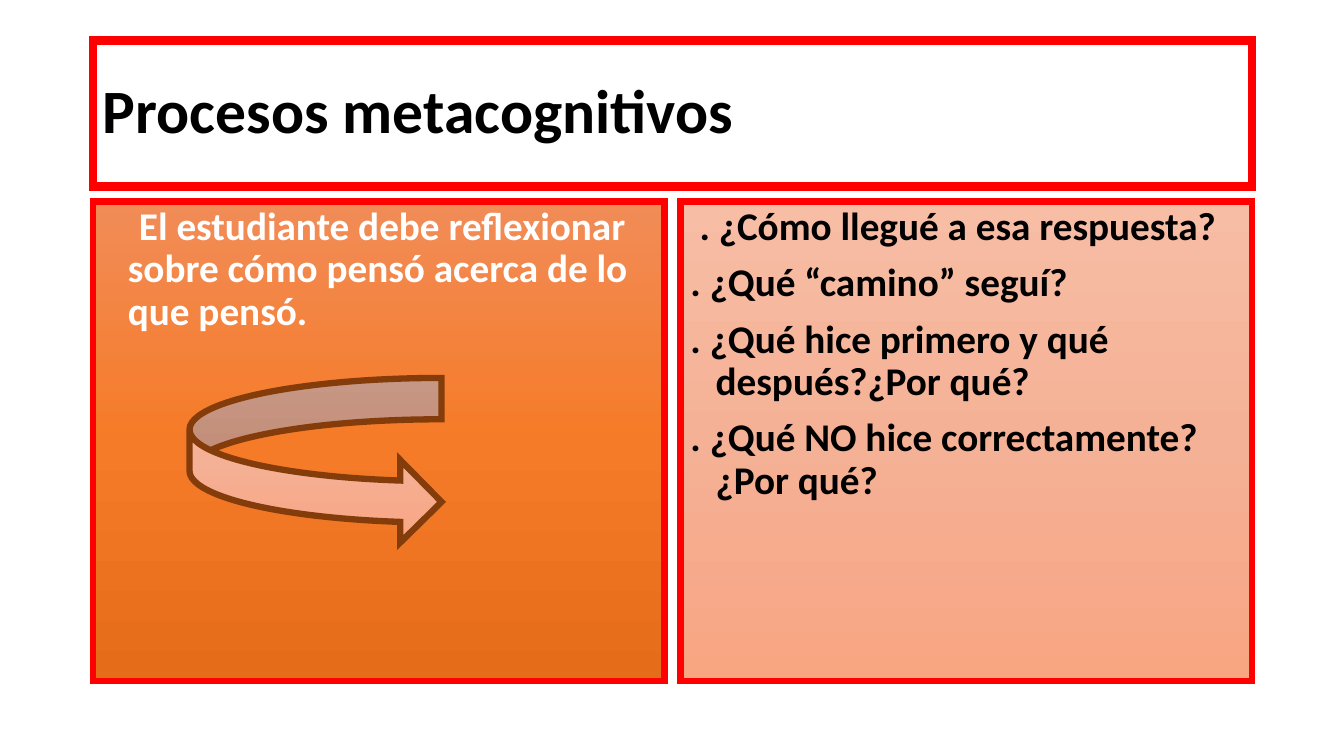
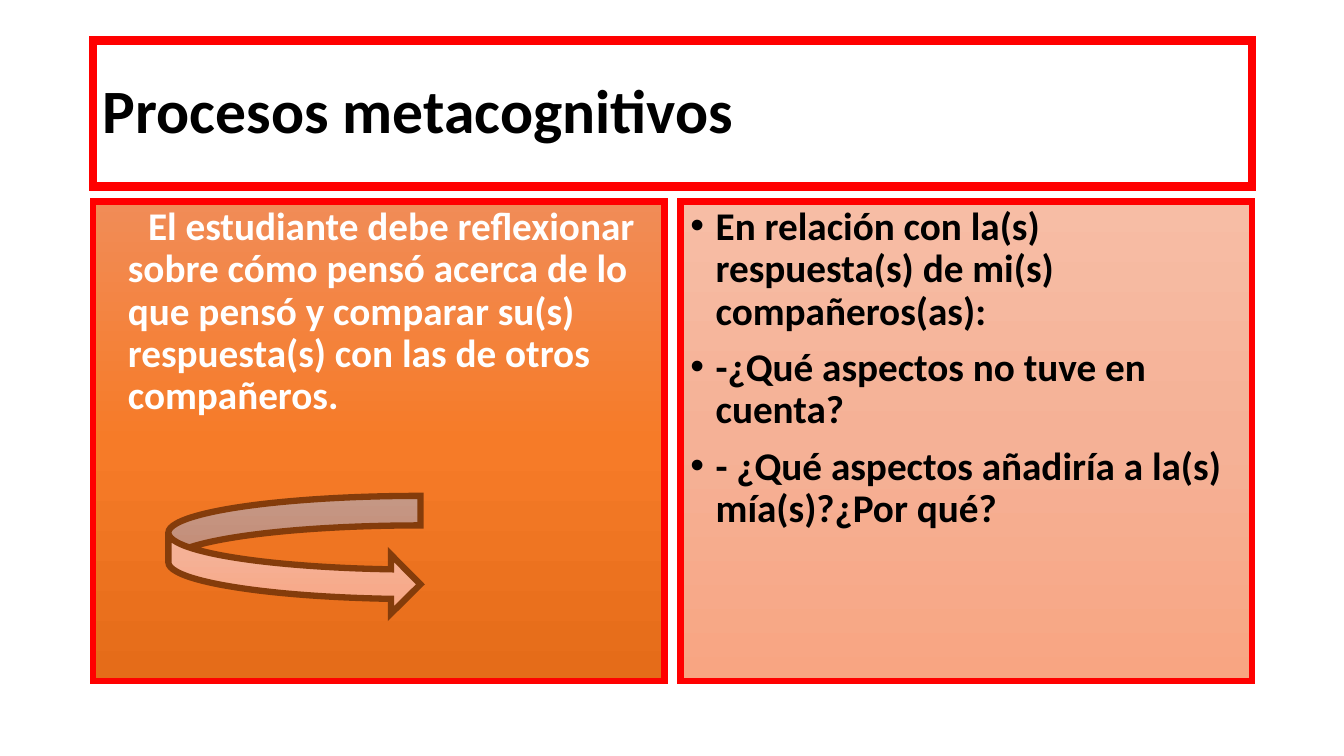
from copy import deepcopy

from lxml.etree import SubElement
from pptx import Presentation
from pptx.dml.color import RGBColor
from pptx.enum.shapes import MSO_SHAPE
from pptx.enum.text import MSO_ANCHOR, MSO_AUTO_SIZE, PP_ALIGN
from pptx.oxml.ns import qn
from pptx.util import Inches, Pt

COLORS = {"frame": "FF0000", "arrow line": "843C0B", "dark text": "000000", "light text": "FFFFFF"}
ORANGE = ["F18C57", "F67B28", "E56C19"]
PEACH = ["F7BDA5", "F5B196", "F8A582"]
FONT = "Calibri"

LEFT, WIDTH = 0.92, 11.5
PANEL_TOP, PANEL_WIDTH, PANEL_HEIGHT = 2, 5.67, 4.76
RIGHT_PANEL_LEFT = LEFT + WIDTH - PANEL_WIDTH
TEXT_MARGIN = 0.25

# Each paragraph is (text, first-line indent)
SLIDES = [
    {
        "statement": [("El estudiante debe reflexionar sobre cómo pensó acerca de lo que pensó.", 0.11)],
        "questions": [
            (". ¿Cómo llegué a esa respuesta?", -0.16),
            (". ¿Qué “camino” seguí?", -0.25),
            (". ¿Qué hice primero y qué después?¿Por qué?", -0.25),
            (". ¿Qué NO hice correctamente? ¿Por qué?", -0.25),
        ],
        "bullet": None,
        "arrow": (1.88, 3.75, 2.5, 1.64),
    },
    {
        "statement": [("El estudiante debe reflexionar sobre cómo pensó acerca de lo que pensó "
                       "y comparar su(s) respuesta(s) con las de otros compañeros.", 0.2)],
        "questions": [
            ("En relación con la(s) respuesta(s) de mi(s) compañeros(as):", -0.25),
            ("-¿Qué aspectos no tuve en cuenta?", -0.25),
            ("- ¿Qué aspectos añadiría a la(s) mía(s)?¿Por qué?", -0.25),
        ],
        "bullet": "•",
        "arrow": (1.67, 4.92, 2.5, 1.17),
    },
]


def style_shape(shape, line_color, line_width, gradient=None):
    """Set a mitred outline and, if given, a top-to-bottom three-stop gradient."""
    if gradient:
        shape.shadow.inherit = False
        shape.fill.gradient()
        shape.fill.gradient_angle = 270
        stop_list = shape.element.spPr.find(".//" + qn("a:gsLst"))
        stop_list.append(deepcopy(stop_list[0]))
        for stop, color, position in zip(shape.fill.gradient_stops, gradient, (0, 0.5, 1)):
            stop.color.rgb = RGBColor.from_string(color)
            stop.position = position
    shape.line.color.rgb = RGBColor.from_string(COLORS[line_color])
    shape.line.width = Pt(line_width)
    SubElement(shape.element.spPr.find(qn("a:ln")), qn("a:miter"), lim="800000")


def add_text(paragraph, text, size, color):
    """Add one bold run to a left-aligned paragraph."""
    paragraph.alignment = PP_ALIGN.LEFT
    paragraph.line_spacing = 0.9
    run = paragraph.add_run()
    run.text = text
    run.font.name = FONT
    run.font.size = Pt(size)
    run.font.bold = True
    run.font.color.rgb = RGBColor.from_string(COLORS[color])


presentation = Presentation()
presentation.slide_width = Inches(13.33)
presentation.slide_height = Inches(7.5)

for content in SLIDES:
    slide = presentation.slides.add_slide(presentation.slide_layouts[5])

    # Framed title
    title = slide.shapes.title
    title.left, title.top = Inches(LEFT), Inches(0.4)
    title.width, title.height = Inches(WIDTH), Inches(1.45)
    title.text_frame.auto_size = MSO_AUTO_SIZE.NONE
    title.text_frame.vertical_anchor = MSO_ANCHOR.MIDDLE
    style_shape(title, "frame", 6)
    add_text(title.text_frame.paragraphs[0], "Procesos metacognitivos", 44, "dark text")

    # Statement panel on the left, questions panel on the right
    panels = [
        (LEFT, ORANGE, "light text", content["statement"], None),
        (RIGHT_PANEL_LEFT, PEACH, "dark text", content["questions"], content["bullet"]),
    ]
    for left, gradient, text_color, lines, bullet in panels:
        panel = slide.shapes.add_shape(MSO_SHAPE.RECTANGLE, Inches(left), Inches(PANEL_TOP),
                                       Inches(PANEL_WIDTH), Inches(PANEL_HEIGHT))
        style_shape(panel, "frame", 4.5, gradient)
        text_frame = panel.text_frame
        text_frame.word_wrap = True
        text_frame.vertical_anchor = MSO_ANCHOR.TOP
        for number, (text, indent) in enumerate(lines):
            paragraph = text_frame.add_paragraph() if number else text_frame.paragraphs[0]
            add_text(paragraph, text, 28, text_color)
            paragraph.space_before = Pt(10 if number else 0)
            properties = paragraph._p.get_or_add_pPr()
            properties.set("marL", str(Inches(TEXT_MARGIN)))
            properties.set("indent", str(Inches(indent)))
            if bullet:
                SubElement(properties, qn("a:buFont"), typeface="Arial")
                SubElement(properties, qn("a:buChar"), char=bullet)

    # Curved arrow
    arrow = slide.shapes.add_shape(MSO_SHAPE.CURVED_RIGHT_ARROW,
                                   *[Inches(length) for length in content["arrow"]])
    style_shape(arrow, "arrow line", 4.5, PEACH)

presentation.save("out.pptx")
